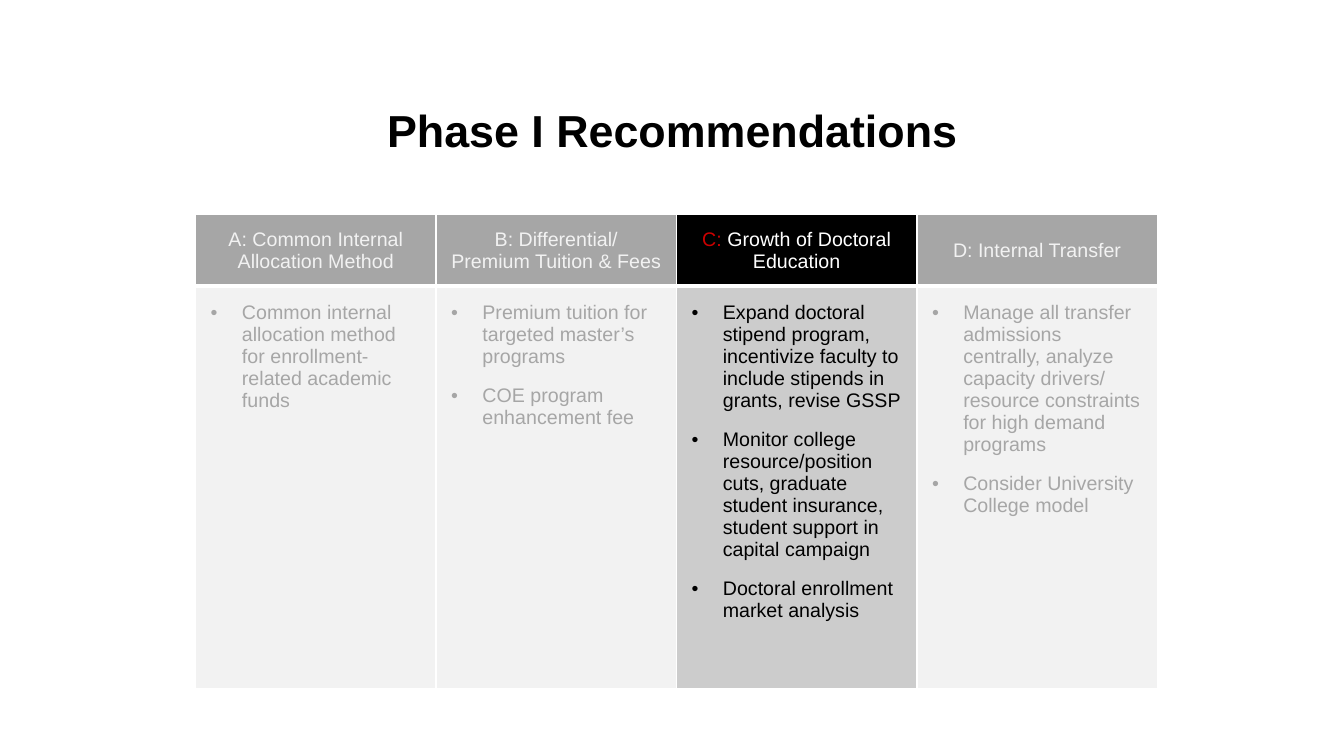
"""Build the Phase I Recommendations slide."""
from lxml.etree import SubElement as Sub
from pptx import Presentation
from pptx.dml.color import RGBColor
from pptx.enum.text import MSO_ANCHOR as Anchor, PP_ALIGN as Align
from pptx.oxml import parse_xml
from pptx.oxml.ns import nsdecls, qn
from pptx.util import Inches, Pt

BLACK, WHITE, RED = "000000", "FFFFFF", "CC0000"
GREY, PALE, MID = "A6A6A6", "F2F2F2", "CCCCCC"

PLANS = [
    (["A: Common Internal Allocation Method"],
     ["Common internal allocation method for enrollment-related academic funds"]),
    (["B: Differential/", "Premium Tuition & Fees"],
     ["Premium tuition for targeted master’s programs",
      "COE program enhancement fee"]),
    (["C: Growth of Doctoral Education"],
     ["Expand doctoral stipend program, incentivize faculty to include "
      "stipends in grants, revise GSSP",
      "Monitor college resource/position cuts, graduate student insurance, "
      "student support in capital campaign",
      "Doctoral enrollment market analysis"]),
    (["D: Internal Transfer"],
     ["Manage all transfer admissions centrally, analyze capacity drivers/ "
      "resource constraints for high demand programs",
      "Consider University College model"]),
]
FOCUS = 2


def color(code):
    return RGBColor.from_string(code)


class Deck:
    def __init__(self, font):
        self.font = font
        self.prs = Presentation()
        self.prs.slide_width, self.prs.slide_height = Inches(13.33), Inches(7.5)
        self.slide = self.prs.slides.add_slide(self.prs.slide_layouts[5])

    def style(self, run, size, ink, bold=False):
        font = run.font
        font.name, font.size, font.bold = self.font, Pt(size), bold
        font.color.rgb = color(ink)

    def title(self, text, left, top, width, height):
        box = self.slide.shapes.title
        box.left, box.top = Inches(left), Inches(top)
        box.width, box.height = Inches(width), Inches(height)
        frame = box.text_frame
        frame.text = text
        frame.vertical_anchor = Anchor.MIDDLE
        para = frame.paragraphs[0]
        para.alignment = Align.CENTER
        self.style(para.runs[0], 32, BLACK, True)

    def table(self, left, top, width, heights, cols):
        frame = self.slide.shapes.add_table(
            len(heights), cols, Inches(left), Inches(top),
            Inches(width), Inches(sum(heights)))
        grid = frame.table
        for col in grid.columns:
            col.width = Inches(width / cols)
        for row, height in zip(grid.rows, heights):
            row.height = Inches(height)
        return grid

    def paint(self, cell, fill, base):
        cell.fill.solid()
        cell.fill.fore_color.rgb = color(fill)
        props = cell._tc.get_or_add_tcPr()
        for at, (side, width) in enumerate(zip("LRTB", (1, 1, 1, base))):
            props.insert(at, parse_xml(
                f'<a:ln{side} {nsdecls("a")} w="{Pt(width)}"><a:solidFill>'
                f'<a:srgbClr val="{WHITE}"/></a:solidFill></a:ln{side}>'))

    def fill_text(self, cell, lines):
        frame = cell.text_frame
        frame.text = "\n".join(lines)
        return frame.paragraphs

    def head(self, cell, lines, focus):
        self.paint(cell, BLACK if focus else GREY, 3)
        cell.vertical_anchor = Anchor.MIDDLE
        for para in self.fill_text(cell, lines):
            para.alignment = Align.CENTER
            if focus:
                label, rest = para.text.split(":")
                para.text = label + ":"
                para.add_run().text = rest
            inks = (RED, WHITE) if focus else (PALE,)
            for run, ink in zip(para.runs, inks):
                self.style(run, 14, ink)

    def body(self, cell, lines, focus):
        self.paint(cell, MID if focus else PALE, 1)
        cell.margin_left = cell.margin_right = Inches(0.15)
        cell.margin_top = cell.margin_bottom = Inches(0.15)
        for para in self.fill_text(cell, lines):
            props = para._p.get_or_add_pPr()
            props.set("marL", str(Inches(0.31)))
            props.set("indent", str(-Inches(0.31)))
            Sub(props, qn("a:buFont"), typeface=self.font)
            Sub(props, qn("a:buChar"), char="•")
            para.space_after = Pt(12)
            self.style(para.runs[0], 14, BLACK if focus else GREY)


def main():
    deck = Deck("Arial")
    deck.title("Phase I Recommendations", 1.67, 0.73, 10, 1.12)
    grid = deck.table(1.94, 2.13, 9.54, (0.71, 3.99), len(PLANS))
    for col, (name, items) in enumerate(PLANS):
        deck.head(grid.cell(0, col), name, col == FOCUS)
        deck.body(grid.cell(1, col), items, col == FOCUS)
    deck.prs.save("out.pptx")


if __name__ == "__main__":
    main()
